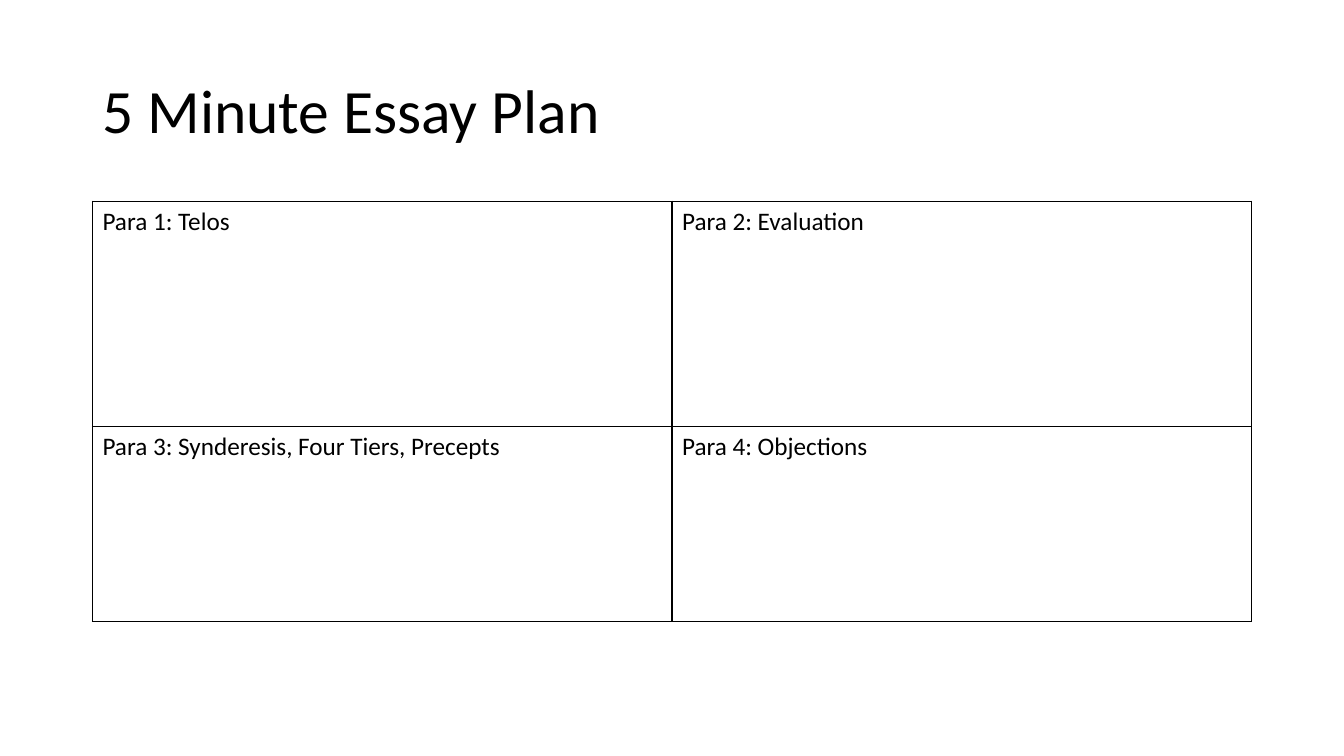
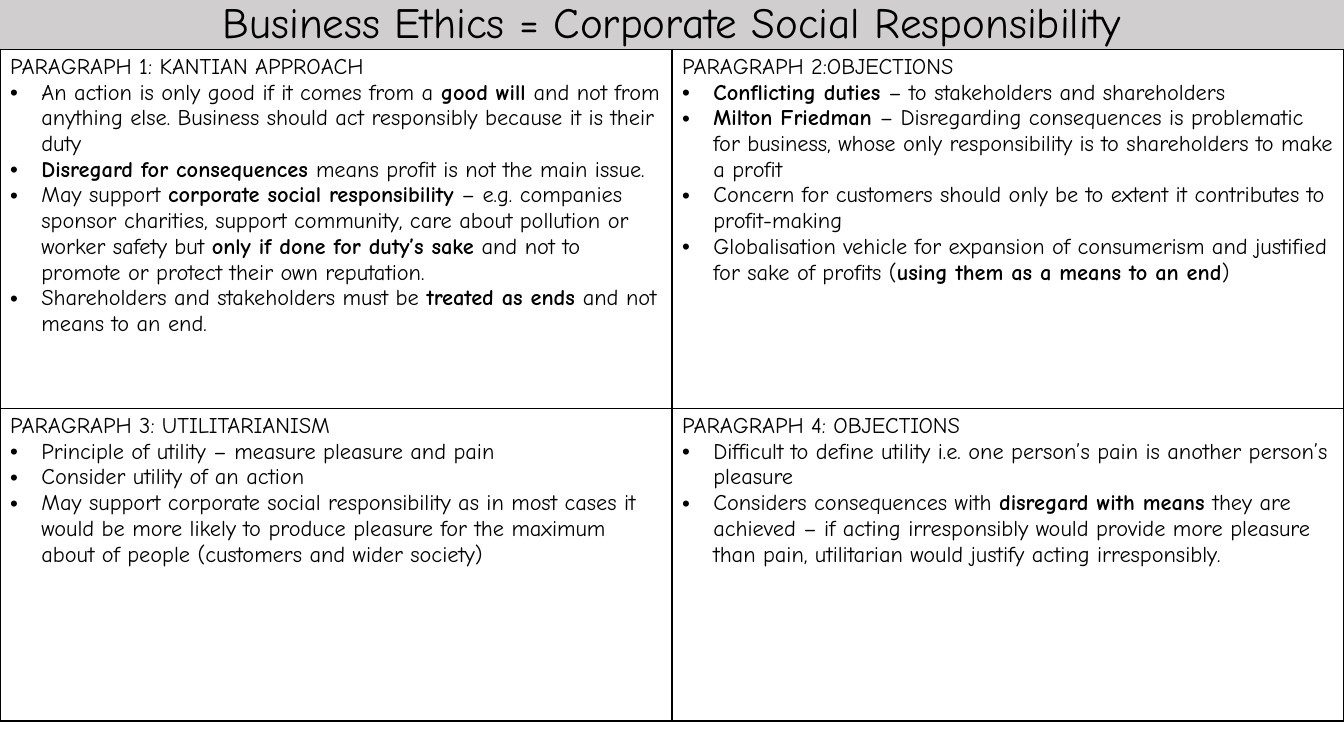
import pptx
import pptx.util
import pptx.dml.color
import pptx.enum.shapes
import pptx.enum.text
import pptx.oxml.ns
from lxml import etree

Cm = pptx.util.Cm
Pt = pptx.util.Pt
ANCHOR = pptx.enum.text.MSO_ANCHOR
ALIGN = pptx.enum.text.PP_ALIGN

BLACK = "000000"
GREY = "D0CECE"
BULLET_INDENT = Cm(0.79)
WIDTH, HEIGHT = Cm(33.87), Cm(19.05)

PLAN = {
    "title": "5 Minute Essay Plan",
    "title_box": (2.33, 1.03, 29.21, 3.68),
    "title_style": {"size": 44, "spacing": 0.9, "align": ALIGN.LEFT, "anchor": ANCHOR.MIDDLE},
    "band": None,
    "font": "Calibri",
    "text_size": 18,
    "grid": (2.33, 5.07, 29.21),
    "row_heights": (5.67, 4.92),
    "cells": [
        [["Para 1: Telos"], ["Para 2: Evaluation"]],
        [["Para 3: Synderesis, Four Tiers, Precepts"], ["Para 4: Objections"]],
    ],
}

ETHICS = {
    "title": "Business Ethics = Corporate Social Responsibility",
    "title_box": (0, 0, 33.87, 1.24),
    "title_style": {"size": 30.8, "spacing": 0.82, "align": ALIGN.CENTER, "anchor": ANCHOR.TOP},
    "band": GREY,
    "font": "Comic Neue",
    "text_size": 16,
    "grid": (0, 1.24, 33.87),
    "row_heights": (9.05, 7.88),
    "cells": [
        [
            [
                "PARAGRAPH 1: KANTIAN APPROACH",
                "An action is only good if it comes from a **good will **and not from anything else. "
                "Business should act responsibly because it is their duty",
                "**Disregard for consequences **means profit is not the main issue.",
                "May support **corporate social responsibility **– e.g. companies sponsor charities, "
                "support community, care about pollution or worker safety but "
                "**only if done for duty’s sake** and not to promote or protect their own reputation.",
                "Shareholders and stakeholders must be **treated as ends **and not means to an end.",
            ],
            [
                "PARAGRAPH 2:OBJECTIONS",
                "**Conflicting duties **– to stakeholders and shareholders",
                "**Milton Friedman **– Disregarding consequences is problematic for business, "
                "whose only responsibility is to shareholders to make a profit",
                "Concern for customers should only be to extent it contributes to profit-making",
                "Globalisation vehicle for expansion of consumerism and justified for sake of profits "
                "(**using them as a means to an end**)",
            ],
        ],
        [
            [
                "PARAGRAPH 3: UTILITARIANISM",
                "Principle of utility – measure pleasure and pain",
                "Consider utility of an action",
                "May support corporate social responsibility as in most cases it would be more likely "
                "to produce pleasure for the maximum about of people (customers and wider society)",
            ],
            [
                "PARAGRAPH 4: OBJECTIONS",
                "Difficult to define utility i.e. one person’s pain is another person’s pleasure",
                "Considers consequences with **disregard with means **they are achieved – if acting "
                "irresponsibly would provide more pleasure than pain, utilitarian would justify "
                "acting irresponsibly.",
            ],
        ],
    ],
}


def rgb(value):
    return pptx.dml.color.RGBColor.from_string(value)


def add_runs(p, text, font, size):
    for i, part in enumerate(text.split("**")):
        if part:
            r = p.add_run()
            r.text = part
            r.font.name = font
            r.font.size = Pt(size)
            r.font.bold = i % 2 == 1
            r.font.color.rgb = rgb(BLACK)


def add_bullet(p):
    pPr = p._p.get_or_add_pPr()
    pPr.set("marL", str(BULLET_INDENT))
    pPr.set("indent", str(-BULLET_INDENT))
    etree.SubElement(pPr, pptx.oxml.ns.qn("a:buFont")).set("typeface", "Arial")
    etree.SubElement(pPr, pptx.oxml.ns.qn("a:buChar")).set("char", "•")


def add_borders(cell):
    qn = pptx.oxml.ns.qn
    tcPr = cell._tc.get_or_add_tcPr()
    for side in ("lnL", "lnR", "lnT", "lnB"):
        ln = etree.SubElement(tcPr, qn("a:" + side))
        ln.set("w", str(Pt(1)))
        fill = etree.SubElement(ln, qn("a:solidFill"))
        etree.SubElement(fill, qn("a:srgbClr")).set("val", BLACK)


def add_title(s, content):
    box = [Cm(v) for v in content["title_box"]]
    style = content["title_style"]
    if content["band"]:
        sp = s.shapes.add_shape(pptx.enum.shapes.MSO_SHAPE.RECTANGLE, *box)
        sp.shadow.inherit = False
        sp.fill.solid()
        sp.fill.fore_color.rgb = rgb(content["band"])
        sp.line.fill.background()
    else:
        sp = s.shapes.add_textbox(*box)
    tf = sp.text_frame
    tf.word_wrap = True
    tf.vertical_anchor = style["anchor"]
    p = tf.paragraphs[0]
    p.alignment = style["align"]
    p.line_spacing = style["spacing"]
    add_runs(p, content["title"], content["font"], style["size"])


def fill_cell(cell, lines, font, size):
    add_borders(cell)
    cell.fill.background()
    tf = cell.text_frame
    for i, line in enumerate(lines):
        p = tf.add_paragraph() if i else tf.paragraphs[0]
        if i:
            add_bullet(p)
        add_runs(p, line, font, size)


def add_grid(s, content):
    left, top, width = content["grid"]
    heights, cells = content["row_heights"], content["cells"]
    columns = len(cells[0])
    table = s.shapes.add_table(
        len(cells), columns, Cm(left), Cm(top), Cm(width), Cm(sum(heights))
    ).table
    table.first_row = False
    table.horz_banding = False
    for column in table.columns:
        column.width = Cm(width / columns)
    for i, (height, row) in enumerate(zip(heights, cells)):
        table.rows[i].height = Cm(height)
        for j, lines in enumerate(row):
            fill_cell(table.cell(i, j), lines, content["font"], content["text_size"])


def main():
    prs = pptx.Presentation()
    prs.slide_width, prs.slide_height = WIDTH, HEIGHT
    for content in (PLAN, ETHICS):
        s = prs.slides.add_slide(prs.slide_layouts[6])
        add_title(s, content)
        add_grid(s, content)
    prs.save("out.pptx")


if __name__ == "__main__":
    main()
